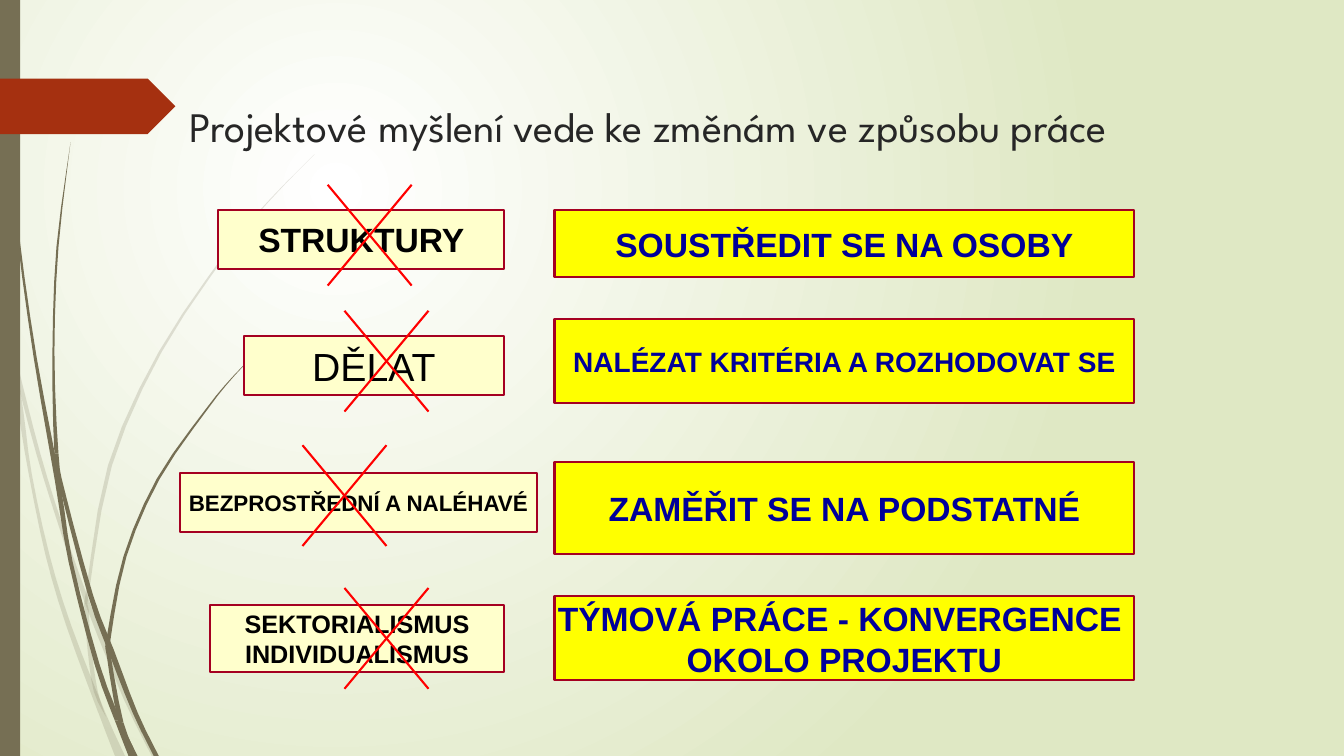
from dataclasses import dataclass

from lxml.etree import SubElement
from pptx import Presentation
from pptx.dml.color import RGBColor
from pptx.enum.shapes import MSO_CONNECTOR, MSO_SHAPE
from pptx.enum.text import MSO_ANCHOR, PP_ALIGN
from pptx.oxml import parse_xml
from pptx.oxml.ns import nsdecls, qn
from pptx.shapes.autoshape import Shape
from pptx.slide import Slide
from pptx.util import Inches, Length, Pt


@dataclass(frozen=True)
class Theme:
    glow: str = "FFFFFF"
    meadow: str = "DFE8C4"
    stem: str = "766F54"
    ribbon: str = "A53010"
    old_fill: str = "FFFFCC"
    old_text: str = "000000"
    new_fill: str = "FFFF00"
    new_text: str = "000099"
    border: str = "A50021"
    cross: str = "FF0000"
    title_text: str = "262626"
    title_font: str = "League Spartan"
    body_font: str = "Arial"
    title_size: int = 30
    line_width: float = 1.5


@dataclass(frozen=True)
class Label:
    """Framed text, placed in grid units."""
    left: float
    top: float
    width: float
    height: float
    lines: tuple[str, ...]
    size: int
    bold: bool = True


@dataclass(frozen=True)
class Change:
    """An old habit, the place of its cross, and the new habit."""
    old: Label
    cross_left: float
    cross_top: float
    new: Label


@dataclass(frozen=True)
class Blade:
    """Grass blade: centre points (x, y, width) and the points where it is jointed."""
    points: tuple[tuple[float, float, float], ...]
    joints: tuple[int, ...]
    opacity: int = 100


THEME = Theme()
UNITS_PER_INCH = 12
CROSS_WIDTH, CROSS_HEIGHT = 10, 12
NEW_LEFT, NEW_WIDTH = 66, 69
CURVE_STEPS = 3

BLADES = (
    Blade(((0, 2.87, 0.03), (0.12, 3.48, 0.04), (0.21, 4.1, 0.05), (0.3, 4.7, 0.03),
           (0.47, 5.5, 0.04), (0.68, 6.2, 0.05), (1.01, 7.07, 0.07), (1.19, 7.5, 0.1)),
          (1, 6), 20),
    Blade(((0.14, 3.45, 0), (0.19, 3.76, 0.04), (0.38, 4.5, 0.04), (0.6, 5.21, 0.04),
           (0.87, 5.99, 0.05), (1.25, 6.93, 0.05), (1.53, 7.5, 0.05)), (4,), 20),
    Blade(((3.12, 1.53, 0), (2.68, 1.98, 0.01), (2.29, 2.45, 0.02), (1.59, 3.49, 0.03),
           (1.09, 4.62, 0.04), (0.87, 5.86, 0.03), (0.86, 6.05, 0.04), (0.89, 6.46, 0.04),
           (0.95, 6.86, 0.04), (1.05, 7.11, 0)), (5, 6), 20),
    Blade(((0.04, 0, 0.01), (0.07, 1.1, 0.01), (0.18, 2.33, 0.02), (0.35, 3.55, 0.03),
           (0.57, 4.77, 0.05), (0.7, 5.57, 0.04), (0.96, 6.58, 0.05), (1.17, 7.15, 0.06),
           (1.32, 7.5, 0.09)), (4, 7)),
    Blade(((0.7, 1.41, 0), (0.57, 2.45, 0.02), (0.53, 3.49, 0.02), (0.56, 4.5, 0.04),
           (0.63, 4.9, 0.04), (0.9, 5.91, 0.05), (1.1, 6.45, 0.06), (1.34, 7.07, 0.05),
           (1.55, 7.5, 0.05)), (3, 4, 6)),
    Blade(((2.6, 3.44, 0), (2.31, 3.74, 0.01), (2.05, 4.06, 0.02), (1.57, 4.75, 0.03),
           (1.24, 5.52, 0.03), (1.08, 6.32, 0.04), (1.08, 6.51, 0.04), (1.2, 7.17, 0.05),
           (1.34, 7.5, 0.04)), (5, 6, 7)),
)

CHANGES = (
    Change(Label(26, 25, 34, 7, ("STRUKTURY",), 24), 39, 22,
           Label(NEW_LEFT, 25, NEW_WIDTH, 8, ("SOUSTŘEDIT SE NA OSOBY",), 24)),
    Change(Label(29, 40, 31, 7, ("DĚLAT",), 28, False), 41, 37,
           Label(NEW_LEFT, 38, NEW_WIDTH, 10, ("NALÉZAT KRITÉRIA A ROZHODOVAT SE",), 20)),
    Change(Label(21.42, 56.33, 42.5, 7, ("BEZPROSTŘEDNÍ A NALÉHAVÉ",), 16), 36, 53,
           Label(NEW_LEFT, 55, NEW_WIDTH, 11, ("ZAMĚŘIT SE NA PODSTATNÉ",), 24)),
    Change(Label(25, 72, 35, 8, ("SEKTORIALISMUS", "INDIVIDUALISMUS"), 18), 41, 70,
           Label(NEW_LEFT, 71, NEW_WIDTH, 10,
                 ("TÝMOVÁ PRÁCE - KONVERGENCE ", "OKOLO PROJEKTU"), 24)),
)


def grid(units: float) -> Length:
    return Inches(units / UNITS_PER_INCH)


def paint(shape: Shape, color: str) -> None:
    shape.shadow.inherit = False
    shape.fill.solid()
    shape.fill.fore_color.rgb = RGBColor.from_string(color)
    shape.line.fill.background()


def paint_background(page: Slide) -> None:
    page.element.cSld.insert(0, parse_xml(
        f'<p:bg {nsdecls("p", "a")}><p:bgPr><a:gradFill rotWithShape="1"><a:gsLst>'
        f'<a:gs pos="0"><a:srgbClr val="{THEME.glow}"/></a:gs>'
        f'<a:gs pos="100000"><a:srgbClr val="{THEME.meadow}"/></a:gs></a:gsLst>'
        '<a:path path="circle"><a:fillToRect l="50000" t="50000" r="100000" b="100000"/>'
        '</a:path></a:gradFill><a:effectLst/></p:bgPr></p:bg>'))


def smooth(values: list[float]) -> list[float]:
    """Pass a Catmull-Rom curve through the values."""
    padded = [values[0], *values, values[-1]]
    curve = []
    for a, b, c, d in zip(padded, padded[1:], padded[2:], padded[3:]):
        for step in range(CURVE_STEPS):
            t = step / CURVE_STEPS
            curve.append(b + t * (c - a) / 2 + t**2 * (2 * a - 5 * b + 4 * c - d) / 2
                         + t**3 * (3 * b - a - 3 * c + d) / 2)
    return curve + [values[-1]]


def draw_blade(page: Slide, blade: Blade) -> None:
    curve = list(zip(*(smooth(list(values)) for values in zip(*blade.points))))
    ends = [0, *blade.joints, len(blade.points) - 1]
    for first, last in zip(ends, ends[1:]):
        piece = curve[first * CURVE_STEPS:last * CURVE_STEPS + 1]
        left = [(x - width / 2, y) for x, y, width in piece]
        right = [(x + width / 2, y) for x, y, width in piece]
        outline = [(Inches(max(x, 0)), Inches(y)) for x, y in left + right[::-1]]
        builder = page.shapes.build_freeform(*outline[0])
        builder.add_line_segments(outline[1:], close=True)
        shape = builder.convert_to_shape()
        paint(shape, THEME.stem)
        if blade.opacity < 100:
            color = shape.element.spPr.find(qn("a:solidFill"))[0]
            SubElement(color, qn("a:alpha"), val=str(blade.opacity * 1000))


def draw_label(page: Slide, label: Label, fill: str, text_color: str) -> None:
    box = page.shapes.add_shape(MSO_SHAPE.RECTANGLE, grid(label.left), grid(label.top),
                                grid(label.width), grid(label.height))
    paint(box, fill)
    box.line.color.rgb = RGBColor.from_string(THEME.border)
    box.line.width = Pt(THEME.line_width)
    frame = box.text_frame
    frame.word_wrap = False
    frame.vertical_anchor = MSO_ANCHOR.MIDDLE
    for index, line in enumerate(label.lines):
        para = frame.add_paragraph() if index else frame.paragraphs[0]
        para.alignment = PP_ALIGN.CENTER
        span = para.add_run()
        span.text = line
        span.font.name = THEME.body_font
        span.font.size = Pt(label.size)
        span.font.bold = label.bold
        span.font.color.rgb = RGBColor.from_string(text_color)


def draw_cross(page: Slide, left: float, top: float) -> None:
    right, bottom = left + CROSS_WIDTH, top + CROSS_HEIGHT
    for start, end in ((left, right), (right, left)):
        stroke = page.shapes.add_connector(MSO_CONNECTOR.STRAIGHT, grid(start), grid(bottom),
                                           grid(end), grid(top))
        stroke.line.color.rgb = RGBColor.from_string(THEME.cross)
        stroke.line.width = Pt(THEME.line_width)
        SubElement(stroke.element.spPr, qn("a:effectLst"))


def draw_title(page: Slide, text: str) -> None:
    box = page.shapes.add_textbox(Inches(1.78), Inches(0.95), Inches(11.39), Inches(0.55))
    box.text_frame.word_wrap = True
    span = box.text_frame.paragraphs[0].add_run()
    span.text = text
    span.font.name = THEME.title_font
    span.font.size = Pt(THEME.title_size)
    span.font.color.rgb = RGBColor.from_string(THEME.title_text)


def main() -> None:
    deck = Presentation()
    deck.slide_width, deck.slide_height = Inches(13.33), Inches(7.5)
    page = deck.slides.add_slide(deck.slide_layouts[6])

    # Backdrop: glow, grass, side bar and ribbon
    paint_background(page)
    for blade in BLADES:
        draw_blade(page, blade)
    paint(page.shapes.add_shape(MSO_SHAPE.RECTANGLE, 0, 0, Inches(0.2), Inches(7.5)), THEME.stem)
    paint(page.shapes.add_shape(MSO_SHAPE.PENTAGON, 0, Inches(0.78), Inches(1.74), Inches(0.55)),
          THEME.ribbon)

    # Old habits crossed out, new habits beside them
    for change in CHANGES:
        draw_label(page, change.old, THEME.old_fill, THEME.old_text)
        draw_label(page, change.new, THEME.new_fill, THEME.new_text)
        draw_cross(page, change.cross_left, change.cross_top)

    draw_title(page, "Projektové myšlení vede ke změnám ve způsobu práce")
    deck.save("out.pptx")


if __name__ == "__main__":
    main()
